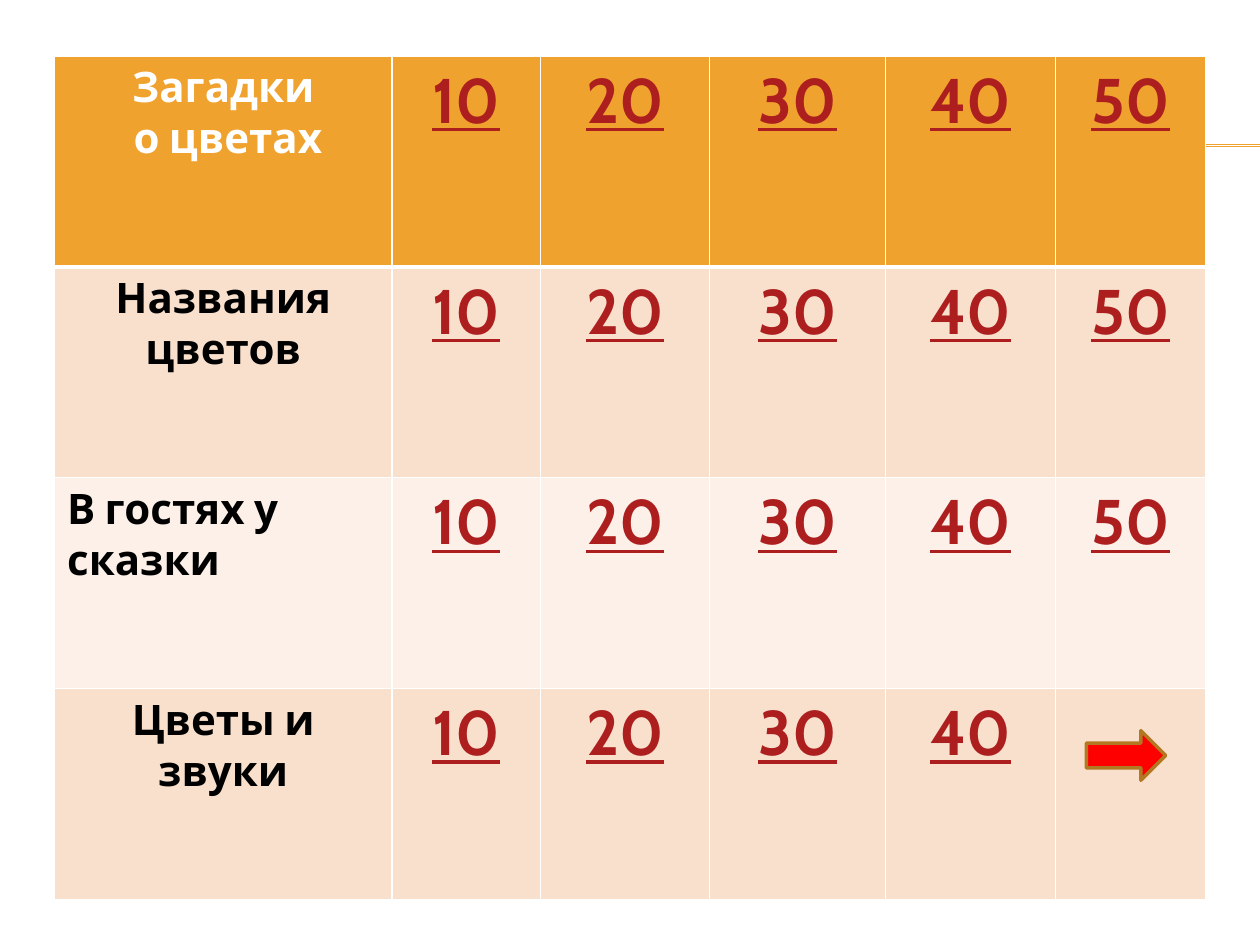
from lxml.etree import SubElement
from pptx import Presentation
from pptx.dml.color import RGBColor
from pptx.enum.shapes import MSO_CONNECTOR, MSO_SHAPE
from pptx.enum.text import PP_ALIGN
from pptx.oxml import parse_xml
from pptx.oxml.ns import nsdecls, qn
from pptx.util import Cm, Pt

FONT = "Cabin"
ORANGE, WHITE, BLACK, DARK_RED = "F0A22E", "FFFFFF", "000000", "AD1F1F"
PEACH, CREAM = "F9E0CD", "FCF0E8"

COLUMN_WIDTHS = [6.8, 3, 3.4, 3.55, 3.43, 3.02]
# topic, alignment, points, row fill, topic colour
TOPICS = [
    ("Загадки\n о цветах", PP_ALIGN.CENTER, (10, 20, 30, 40, 50), ORANGE, WHITE),
    ("Названия цветов", PP_ALIGN.CENTER, (10, 20, 30, 40, 50), PEACH, BLACK),
    ("В гостях у сказки", PP_ALIGN.LEFT, (10, 20, 30, 40, 50), CREAM, BLACK),
    ("Цветы и звуки", PP_ALIGN.CENTER, (10, 20, 30, 40), PEACH, BLACK),
]


def color(hex_value):
    return RGBColor.from_string(hex_value)


def fill_cell(cell, fill, bottom_width):
    """Fill a cell and give it white borders."""
    cell.fill.solid()
    cell.fill.fore_color.rgb = color(fill)
    properties = cell._tc.get_or_add_tcPr()
    widths = {"lnL": 1, "lnR": 1, "lnT": 1, "lnB": bottom_width}
    for position, (side, width) in enumerate(widths.items()):
        border = parse_xml(
            f'<a:{side} {nsdecls("a")} w="{Pt(width)}"><a:solidFill>'
            f'<a:srgbClr val="{WHITE}"/></a:solidFill></a:{side}>')
        properties.insert(position, border)


def write_cell(cell, text, size, text_color, alignment, underline=False):
    cell.text_frame.text = text
    for paragraph in cell.text_frame.paragraphs:
        paragraph.alignment = alignment
        for run in paragraph.runs:
            run.font.name = FONT
            run.font.size = Pt(size)
            run.font.bold = True
            run.font.underline = underline
            run.font.color.rgb = color(text_color)


def add_rule(slide, left, top, width):
    """Draw the double line that runs off to the right edge."""
    for offset in (0, 0.03):
        y = Cm(top + offset)
        line = slide.shapes.add_connector(
            MSO_CONNECTOR.STRAIGHT, Cm(left), y, Cm(left + width), y)
        line.line.color.rgb = color(ORANGE)
        line.line.width = Pt(0.75)
        SubElement(line._element.spPr, qn("a:effectLst"))


def add_question_board(slide, left, top, height):
    frame = slide.shapes.add_table(
        len(TOPICS), len(COLUMN_WIDTHS), Cm(left), Cm(top),
        Cm(sum(COLUMN_WIDTHS)), Cm(height))
    table = frame.table
    for column, width in zip(table.columns, COLUMN_WIDTHS):
        column.width = Cm(width)
    for index, (topic, alignment, points, fill, topic_color) in enumerate(TOPICS):
        row = table.rows[index]
        row.height = Cm(height / len(TOPICS))
        for cell in row.cells:
            fill_cell(cell, fill, bottom_width=3 if index == 0 else 1)
        write_cell(row.cells[0], topic, 24, topic_color, alignment)
        for number, value in enumerate(points, start=1):
            write_cell(row.cells[number], str(value), 36, DARK_RED,
                       PP_ALIGN.CENTER, underline=True)


def add_next_arrow(slide, left, top, width, height):
    arrow = slide.shapes.add_shape(
        MSO_SHAPE.RIGHT_ARROW, Cm(left), Cm(top), Cm(width), Cm(height))
    arrow.shadow.inherit = False
    arrow.fill.solid()
    arrow.fill.fore_color.rgb = color("FF0000")
    arrow.line.color.rgb = color("B27822")
    arrow.line.width = Pt(2)


def main():
    presentation = Presentation()
    presentation.slide_width, presentation.slide_height = Cm(25.4), Cm(19.05)
    slide = presentation.slides.add_slide(presentation.slide_layouts[6])
    add_rule(slide, left=1.42, top=2.92, width=23.98)
    add_question_board(slide, left=1.1, top=1.13, height=17)
    add_next_arrow(slide, left=21.9, top=14.73, width=1.6, height=1)
    presentation.save("out.pptx")


if __name__ == "__main__":
    main()
